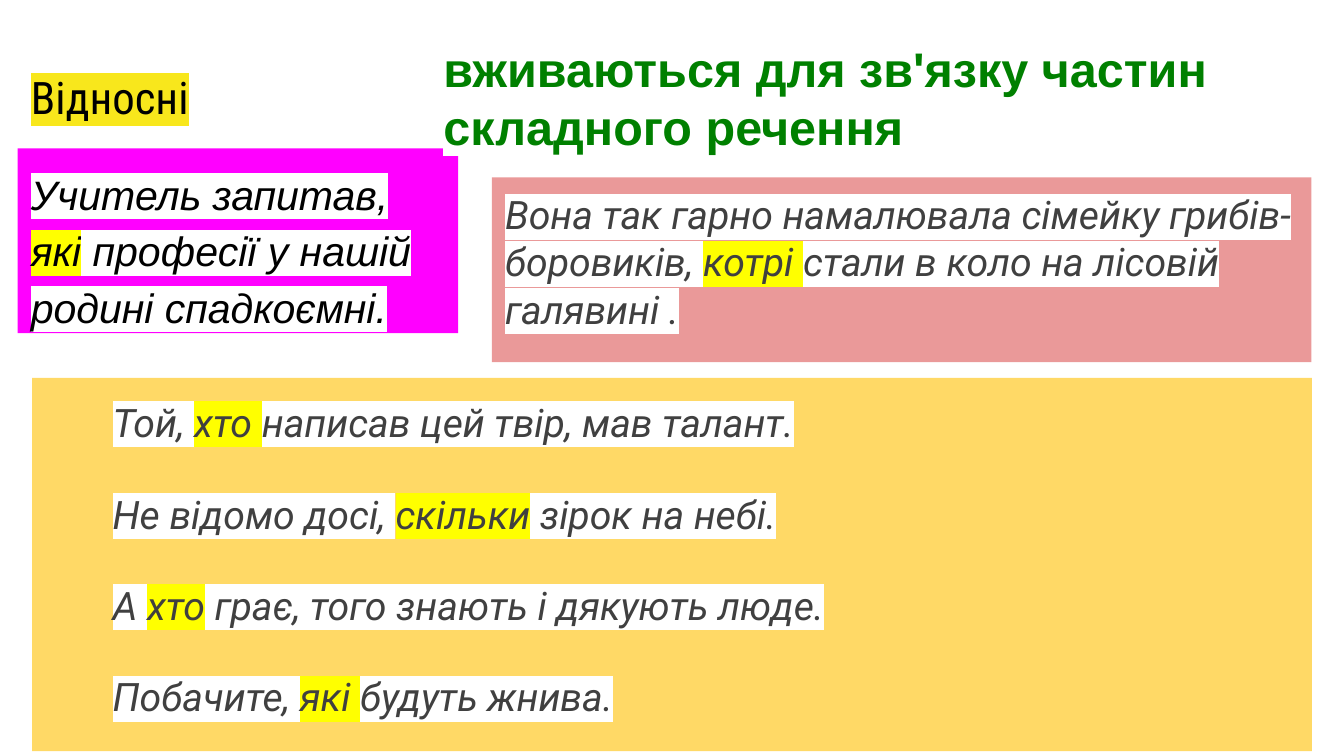
from pptx import Presentation
from pptx.dml.color import RGBColor
from pptx.enum.shapes import MSO_SHAPE
from pptx.enum.text import MSO_ANCHOR, PP_ALIGN
from pptx.oxml.ns import qn
from pptx.util import Pt
from lxml import etree

RECTANGLE = MSO_SHAPE.RECTANGLE
TOP, BOTTOM = MSO_ANCHOR.TOP, MSO_ANCHOR.BOTTOM
LEFT = PP_ALIGN.LEFT

COLOURS = {
    "black": "000000",
    "grey": "404040",
    "green": "008000",
    "white": "FFFFFF",
    "yellow": "FFFF00",
    "gold": "F8E71C",
    "magenta": "FF00FF",
    "rose": "EA9999",
    "amber": "FFD966",
}
INSET = 7.2


class PageBuilder:
    def __init__(self, page):
        self.page = page

    def label(self, place, paras, anchor=TOP, **style):
        box = self.page.shapes.add_textbox(*map(Pt, place))
        self.fill_text(box.text_frame, paras, anchor, **style)

    def panel(self, place, fill, paras, **style):
        box = self.page.shapes.add_shape(RECTANGLE, *map(Pt, place))
        box.shadow.inherit = False
        box.fill.solid()
        box.fill.fore_color.rgb = RGBColor.from_string(COLOURS[fill])
        box.line.fill.background()
        self.fill_text(box.text_frame, paras, TOP, **style)

    def fill_text(self, frame, paras, anchor, indent=0, spacing=1.0,
                  before=(0,), after=(0,), **font):
        """Fill the frame; before and after hold one gap per paragraph."""
        frame.word_wrap = True
        frame.vertical_anchor = anchor
        frame.margin_left = frame.margin_right = Pt(INSET)
        frame.margin_top = frame.margin_bottom = Pt(INSET)
        for index, text in enumerate(paras):
            para = frame.paragraphs[0] if index == 0 else frame.add_paragraph()
            para.alignment = LEFT
            para.line_spacing = spacing
            para.space_before = Pt(before[index])
            para.space_after = Pt(after[index])
            if indent:
                properties = para._p.get_or_add_pPr()
                properties.set("marL", str(Pt(indent)))
                properties.set("indent", "0")
            self.add_spans(para, text, **font)

    def add_spans(self, para, text, name, size, colour, back="white", bold=False, italic=False):
        """Split the text at asterisks; every second part is marked in yellow."""
        for index, part in enumerate(text.split("*")):
            span = para.add_run()
            span.text = part
            span.font.name = name
            span.font.size = Pt(size)
            span.font.bold = bold
            span.font.italic = italic
            span.font.color.rgb = RGBColor.from_string(COLOURS[colour])
            self.highlight(span, "yellow" if index % 2 else back)

    def highlight(self, span, colour):
        mark = etree.Element(qn("a:highlight"))
        etree.SubElement(mark, qn("a:srgbClr")).set("val", COLOURS[colour])
        span.font._element.find(qn("a:solidFill")).addnext(mark)


def main():
    deck = Presentation()
    deck.slide_width, deck.slide_height = Pt(720), Pt(405)
    builder = PageBuilder(deck.slides.add_slide(deck.slide_layouts[6]))
    example = {"name": "Roboto", "size": 21, "colour": "grey", "italic": True}

    builder.label((9.5, 13.5, 221, 60), ["Відносні"], anchor=BOTTOM,
                  name="Roboto Condensed", size=24, colour="black", back="gold")
    builder.panel((9.5, 79.5, 236, 99), "magenta",
                  ["Учитель запитав, *які* професії у нашій родині спадкоємні."],
                  spacing=1.15, after=(16,),
                  name="Arial", size=22, colour="black", italic=True)
    builder.label((230.5, 13.5, 488, 65.5),
                  ["вживаються для зв'язку частин складного речення"],
                  name="Arial", size=26, colour="green", bold=True)
    builder.panel((263.5, 95, 439, 99), "rose",
                  ["Вона так гарно намалювала сімейку грибів-боровиків, "
                   "*котрі *стали в коло на лісовій галявині ."],
                  **example)
    builder.panel((17.25, 202.5, 685.5, 200), "amber",
                  ["Той, *хто *написав цей твір, мав талант.",
                   "Не відомо досі, *скільки* зірок на небі.",
                   "А *хто* грає, того знають і дякують люде.",
                   "Побачите, *які *будуть жнива."],
                  indent=36, spacing=1.15,
                  before=(7, 20, 20, 20), after=(0, 0, 0, 20), **example)
    deck.save("out.pptx")


if __name__ == "__main__":
    main()
